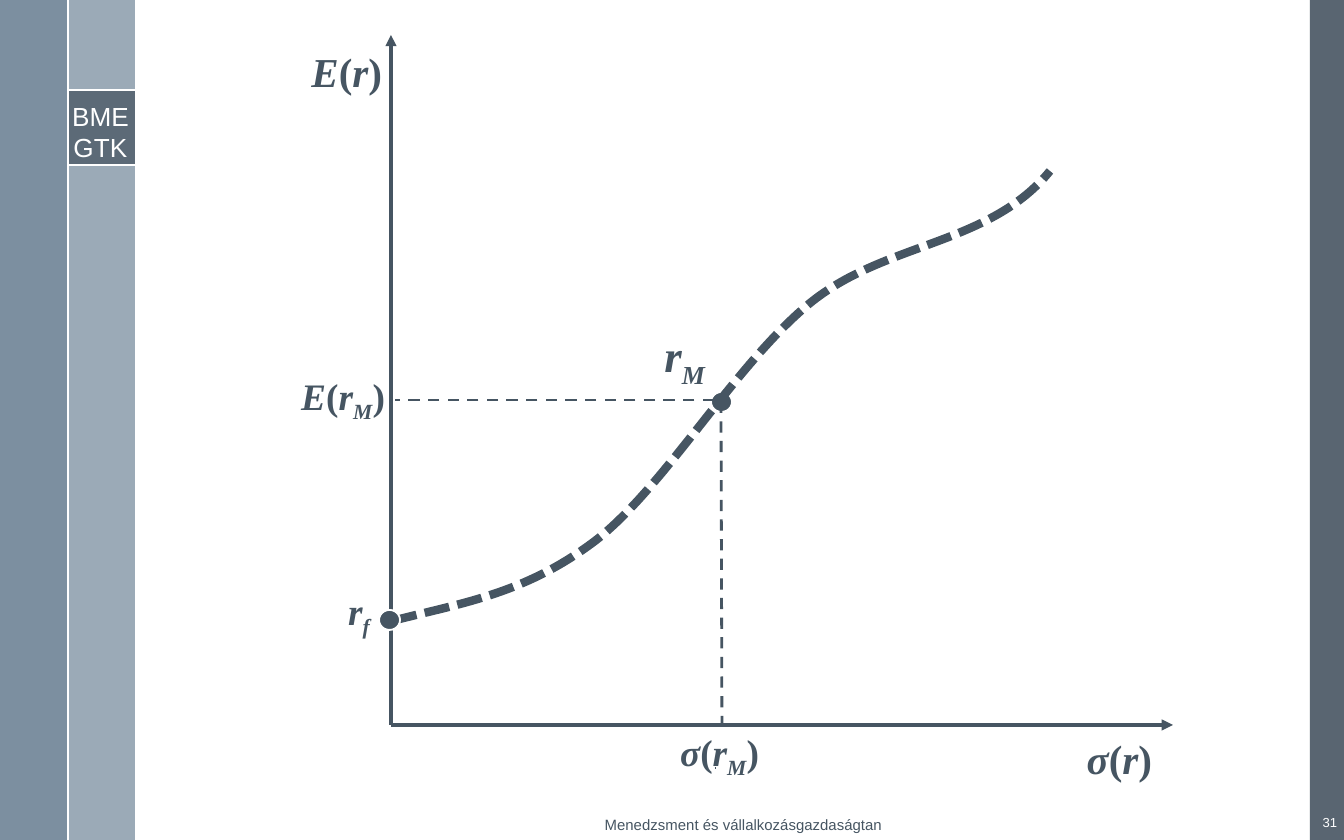
from typing import NamedTuple

from lxml.etree import SubElement
from pptx import Presentation
from pptx.dml.color import RGBColor
from pptx.enum.dml import MSO_LINE
from pptx.enum.shapes import MSO_CONNECTOR, MSO_SHAPE
from pptx.enum.text import MSO_ANCHOR, PP_ALIGN
from pptx.oxml.ns import qn
from pptx.util import Inches, Pt

W, H = 1344, 840
SCALE = Inches(10) / W
INK, SLATE, WHITE = "465562", "475562", "FFFFFF"
SERIF, SANS = "Times New Roman", "Arial"


class Box(NamedTuple):
    x: int
    y: int
    w: int
    h: int


class Panel(NamedTuple):
    box: Box
    color: str
    alpha: int = 100


class Line(NamedTuple):
    start: tuple[int, int]
    end: tuple[int, int]
    color: str = INK
    width: float = 1.5
    dash: bool = False
    arrow: bool = False


class Label(NamedTuple):
    """Math label; an underscore makes the next letter a subscript."""
    box: Box
    text: str
    size: int
    plate: bool = False


class Note(NamedTuple):
    box: Box
    lines: list[str]
    size: int
    color: str
    align: PP_ALIGN
    inset: tuple[int, int] = (10, 5)
    anchor: MSO_ANCHOR = MSO_ANCHOR.MIDDLE


PANELS = [
    Panel(Box(1310, 0, 34, H), SLATE, 90),
    Panel(Box(68, 0, 67, H), "9BAAB7"),
    Panel(Box(0, 0, 67, H), "6A8093", 88),
    Panel(Box(68, 90, 67, 75), SLATE, 75),
]
RULES = [
    Line((68, 90), (135, 90), WHITE),
    Line((68, 165), (135, 165), WHITE),
    Line((68, 0), (68, H), WHITE),
]
NOTES = [
    Note(Box(67, 100, 67, 63), ["BME", "GTK"], 14, WHITE, PP_ALIGN.CENTER, (0, 0), MSO_ANCHOR.TOP),
    Note(Box(321, 815, 845, 20), ["Menedzsment és vállalkozásgazdaságtan"], 8, INK, PP_ALIGN.CENTER),
    Note(Box(1308, 809, 39, 27), ["31"], 7, WHITE, PP_ALIGN.RIGHT),
]
AXES = [
    Line((391, 725), (1173, 725), width=2, arrow=True),
    Line((391, 725), (391, 35), width=2, arrow=True),
]
LABELS = [
    Label(Box(550, 726, 615, 60), "σ(r)", 22),
    Label(Box(296, 40, 99, 60), "E(r)", 22),
    Label(Box(325, 581, 58, 98), "r_f", 20),
    Label(Box(282, 366, 116, 98), "E(r_M)", 20),
    Label(Box(656, 722, 116, 55), "σ(r_M)", 20),
    Label(Box(638, 328, 67, 54), "r_M", 24, True),
]
GUIDES = [
    Line((715, 768), (716, 768), dash=True),
    Line((714, 400), (395, 400), dash=True),
    Line((722, 727), (721, 402), dash=True),
]
MARKET_DOT = Box(711, 392, 21, 20)
RISK_FREE_DOT = Box(379, 610, 21, 20)
CURVE = [
    (392, 621), (462, 603), (525, 594), (595, 541), (664, 488),
    (734, 366), (809, 304), (884, 242), (989, 246), (1050, 171),
]


def px(n: int) -> int:
    return round(n * SCALE)


def rgb(color: str) -> RGBColor:
    return RGBColor.from_string(color)


def paint(fill, color: str, alpha: int = 100) -> None:
    fill.solid()
    fill.fore_color.rgb = rgb(color)
    if alpha < 100:
        SubElement(fill._xPr.find(".//" + qn("a:srgbClr")), qn("a:alpha"), val=str(alpha * 1000))


def add_panel(s, panel: Panel) -> None:
    sp = s.shapes.add_shape(MSO_SHAPE.RECTANGLE, *map(px, panel.box))
    sp.shadow.inherit = False
    paint(sp.fill, panel.color, panel.alpha)
    sp.line.fill.background()


def add_line(s, line: Line) -> None:
    cn = s.shapes.add_connector(MSO_CONNECTOR.STRAIGHT, *map(px, line.start + line.end))
    cn.line.color.rgb = rgb(line.color)
    cn.line.width = Pt(line.width)
    if line.dash:
        cn.line.dash_style = MSO_LINE.DASH
    if line.arrow:
        SubElement(cn.line._get_or_add_ln(), qn("a:tailEnd"), type="triangle")
    SubElement(cn._element.spPr, qn("a:effectLst"))


def add_dot(s, box: Box) -> None:
    sp = s.shapes.add_shape(MSO_SHAPE.OVAL, *map(px, box))
    sp.shadow.inherit = False
    paint(sp.fill, INK)
    sp.line.color.rgb = rgb(WHITE)
    sp.line.width = Pt(1)


def add_text(s, box: Box, inset: tuple[int, int], anchor: MSO_ANCHOR):
    sp = s.shapes.add_textbox(*map(px, box))
    tf = sp.text_frame
    tf.word_wrap = True
    tf.vertical_anchor = anchor
    tf.margin_left = tf.margin_right = px(inset[0])
    tf.margin_top = tf.margin_bottom = px(inset[1])
    return sp


def style(p, name: str, size: int, color: str, align: PP_ALIGN) -> None:
    p.alignment = align
    p.font.name = name
    p.font.size = Pt(size)
    p.font.color.rgb = rgb(color)


def add_note(s, note: Note) -> None:
    tf = add_text(s, note.box, note.inset, note.anchor).text_frame
    tf.text = "\n".join(note.lines)
    for p in tf.paragraphs:
        style(p, SANS, note.size, note.color, note.align)


def add_label(s, label: Label) -> None:
    sp = add_text(s, label.box, (0, 0) if label.plate else (13, 7), MSO_ANCHOR.TOP)
    if label.plate:
        paint(sp.fill, WHITE)
    p = sp.text_frame.paragraphs[0]
    style(p, SERIF, label.size, INK, PP_ALIGN.RIGHT)
    p.font.bold = True
    for before, char in zip(" " + label.text, label.text):
        if char != "_":
            r = p.add_run()
            r.text = char
            r.font.italic = char not in "()"
            if before == "_":
                r.font._element.set("baseline", "-25000")


def add_curve(s, points: list[tuple[int, int]]) -> None:
    """Draw a cubic Bézier chain: a start point, then three points per segment."""
    fb = s.shapes.build_freeform(*points[0], scale=SCALE)
    fb.add_line_segments(points[1:], close=False)
    sp = fb.convert_to_shape()
    sp.shadow.inherit = False
    sp.fill.background()
    sp.line.color.rgb = rgb(INK)
    sp.line.width = Pt(4.5)
    sp.line.dash_style = MSO_LINE.SQUARE_DOT
    steps = sp._element.xpath(".//a:lnTo")
    outline = steps[0].getparent()
    for i in range(0, len(steps), 3):
        bezier = SubElement(outline, qn("a:cubicBezTo"))
        for step in steps[i:i + 3]:
            bezier.append(step[0])
            outline.remove(step)


def main() -> None:
    prs = Presentation()
    prs.slide_width, prs.slide_height = px(W), px(H)
    s = prs.slides.add_slide(prs.slide_layouts[6])
    for panel in PANELS:
        add_panel(s, panel)
    for line in RULES + AXES:
        add_line(s, line)
    for note in NOTES:
        add_note(s, note)
    for label in LABELS:
        add_label(s, label)
    add_dot(s, MARKET_DOT)
    add_curve(s, CURVE)
    for line in GUIDES:
        add_line(s, line)
    add_dot(s, RISK_FREE_DOT)
    prs.save("out.pptx")


if __name__ == "__main__":
    main()
